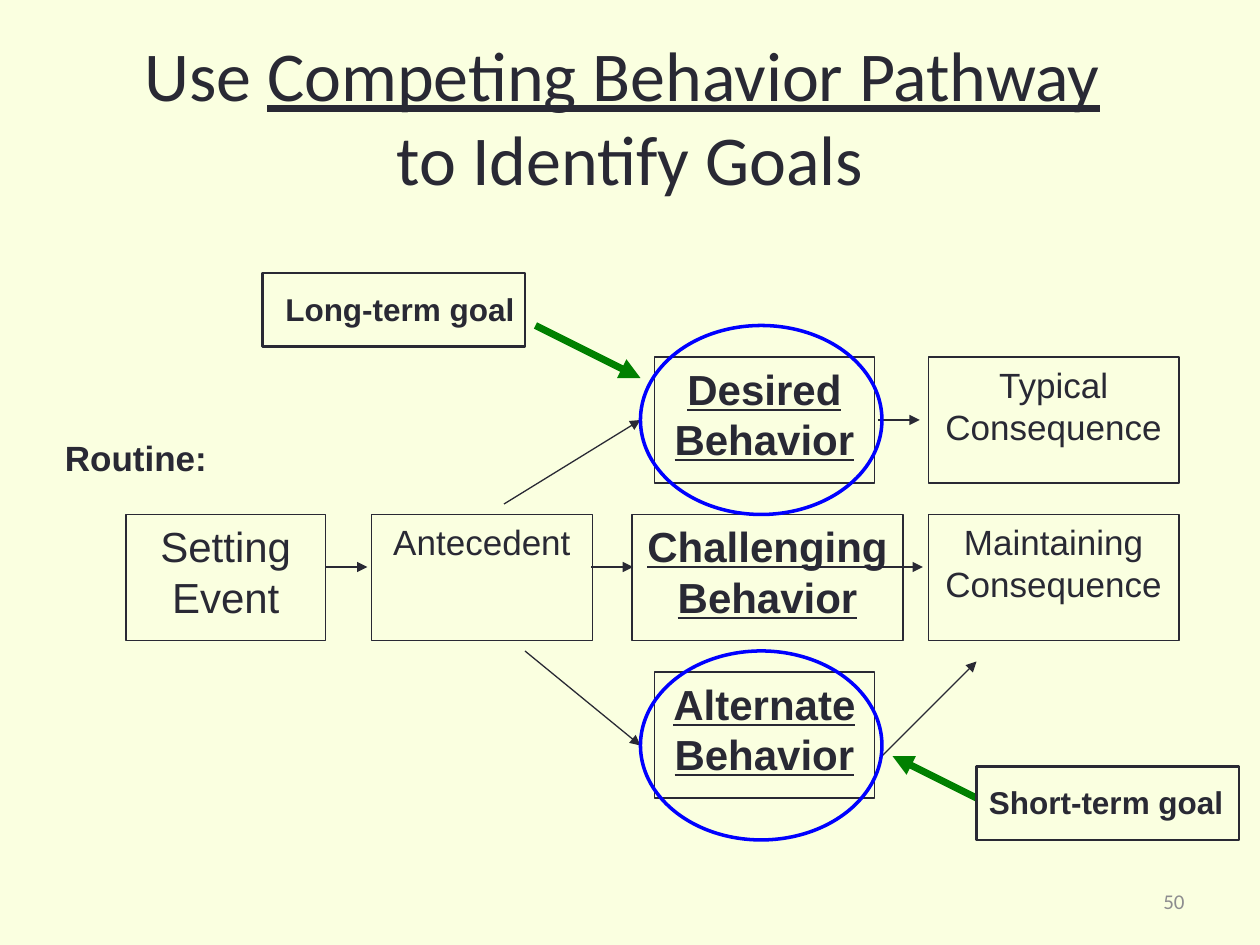
from dataclasses import dataclass
from lxml import etree
from pptx import Presentation
from pptx.dml.color import RGBColor
from pptx.enum.shapes import MSO_CONNECTOR, MSO_SHAPE
from pptx.enum.text import MSO_ANCHOR, PP_ALIGN
from pptx.oxml.ns import qn
from pptx.util import Inches, Pt

RECT, OVAL, STRAIGHT = MSO_SHAPE.RECTANGLE, MSO_SHAPE.OVAL, MSO_CONNECTOR.STRAIGHT
LEFT, CENTER, RIGHT = PP_ALIGN.LEFT, PP_ALIGN.CENTER, PP_ALIGN.RIGHT
TOP, MIDDLE = MSO_ANCHOR.TOP, MSO_ANCHOR.MIDDLE


@dataclass(frozen=True)
class Theme:
    bg: str = "FAFFE0"
    ink: str = "292934"
    muted: str = "8D8D8F"
    ring: str = "0000FF"
    goal: str = "008000"
    head: str = "Calibri"
    body: str = "Arial"
    title: int = 40
    large: int = 24
    medium: int = 20
    label: int = 18
    small: int = 12
    thin: float = 0.75
    frame: float = 1.5
    circle: float = 2
    thick: float = 4


class Deck:
    COLS, ROWS = 120, 90

    def __init__(self, theme):
        self.t = theme
        self.prs = Presentation()
        self.prs.slide_width, self.prs.slide_height = Inches(10), Inches(7.5)
        self.s = self.prs.slides.add_slide(self.prs.slide_layouts[6])
        fill = self.s.background.fill
        fill.solid()
        fill.fore_color.rgb = RGBColor.from_string(theme.bg)

    def grid(self, *cells):
        units = (self.prs.slide_width / self.COLS, self.prs.slide_height / self.ROWS)
        return [round(c * units[i % 2]) for i, c in enumerate(cells)]

    def stroke(self, line, color, width):
        line.color.rgb = RGBColor.from_string(color)
        line.width = Pt(width)

    def add_runs(self, tf, runs, size, font=None, color=None, bold=False, align=LEFT, anchor=TOP):
        tf.word_wrap = True
        tf.vertical_anchor = anchor
        p = tf.paragraphs[0]
        p.alignment = align
        for text, underline in runs:
            if text == "\n":
                p.add_line_break()
                continue
            r = p.add_run()
            r.text = text
            r.font.name = font or self.t.body
            r.font.size = Pt(size)
            r.font.bold = bold
            r.font.underline = underline
            r.font.color.rgb = RGBColor.from_string(color or self.t.ink)

    def text(self, at, runs, size, **style):
        self.add_runs(self.s.shapes.add_textbox(*self.grid(*at)).text_frame, runs, size, **style)

    def outline(self, at, kind, color, width):
        sp = self.s.shapes.add_shape(kind, *self.grid(*at))
        sp.shadow.inherit = False
        sp.fill.background()
        self.stroke(sp.line, color, width)
        return sp

    def box(self, at, text, size, strong=False):
        sp = self.outline(at, RECT, self.t.ink, self.t.thin)
        self.add_runs(sp.text_frame, [(text, strong)], size, bold=strong, align=CENTER)

    def arrow(self, ends, color, width):
        cx = self.s.shapes.add_connector(STRAIGHT, *self.grid(*ends))
        self.stroke(cx.line, color, width)
        props = cx._element.spPr
        etree.SubElement(props.find(qn("a:ln")), qn("a:tailEnd"), type="triangle")
        etree.SubElement(props, qn("a:effectLst"))


def main():
    t = Theme()
    d = Deck(t)
    d.text((3, 2, 114, 18),
           [("Use ", False), ("Competing Behavior Pathway", True), (" ", False),
            ("\n", False), ("to Identify Goals", False)],
           t.title, font=t.head, align=CENTER, anchor=MIDDLE)

    desired, challenging, alternate = 34, 49, 64
    for left, row, width, text, size, strong in (
        (88.4, desired, 23.9, "Typical Consequence", t.medium, False),
        (88.4, challenging, 23.9, "Maintaining Consequence", t.medium, False),
        (62.3, desired, 21, "Desired Behavior", t.large, True),
        (60.2, challenging, 25.8, "Challenging Behavior", t.large, True),
        (62.3, alternate, 21, "Alternate Behavior", t.large, True),
        (35.4, challenging, 21, "Antecedent", t.medium, False),
        (12, challenging, 19, "Setting Event", t.large, False),
    ):
        d.box((left, row, width, 12), text, size, strong)
    d.text((5, 41, 42, 5.2), [("Routine:", False)], t.medium, bold=True)

    for left, row in ((31, 54), (56.3, 54), (83.9, 54), (83.6, 40)):
        d.arrow((left, row, left + 4, row), t.ink, t.thin)
    for ends in ((48, 48, 61, 40), (50, 62, 61, 71), (84, 72, 93, 63)):
        d.arrow(ends, t.ink, t.thin)

    for row in (62, 31):
        d.outline((61, row, 23, 18), OVAL, t.ring, t.circle)

    for left, top, text_left, text, ends in (
        (25, 26, 26, "Long-term goal", (51, 31, 61, 36)),
        (93, 73, 93, "Short-term goal", (93, 76, 85, 72)),
    ):
        d.arrow(ends, t.goal, t.thick)
        d.text((text_left, top + 1, 27, 4.8), [(text, False)], t.label, bold=True)
        d.outline((left, top, 25, 7), RECT, t.ink, t.frame)

    d.text((86, 83.4, 28, 4.8), [("50", False)], t.small, font=t.head,
           color=t.muted, align=RIGHT, anchor=MIDDLE)
    d.prs.save("out.pptx")


if __name__ == "__main__":
    main()
